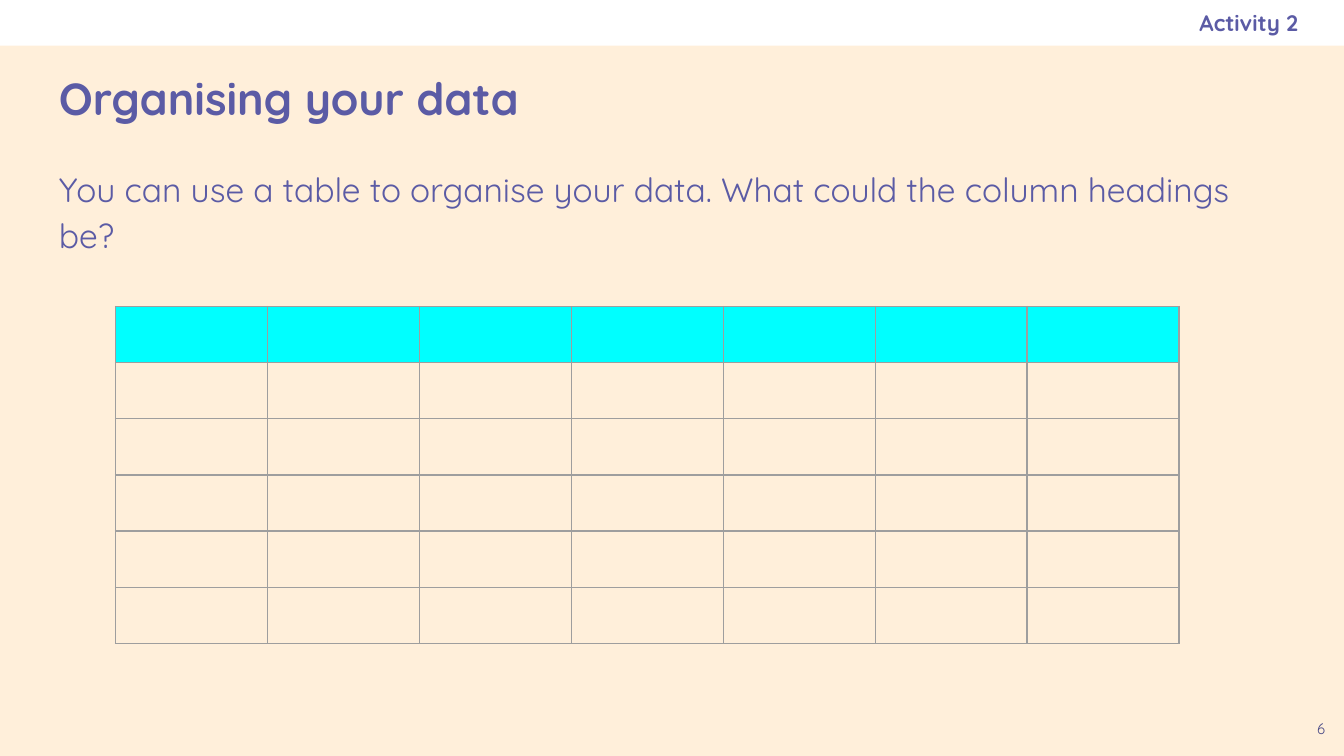
import pptx
import pptx.util
import pptx.dml.color
import pptx.enum.shapes
import pptx.enum.text
import pptx.oxml.ns
from lxml import etree

Pt = pptx.util.Pt
RGB = pptx.dml.color.RGBColor.from_string
ALIGN = pptx.enum.text.PP_ALIGN
ANCHOR = pptx.enum.text.MSO_ANCHOR
qn = pptx.oxml.ns.qn

THEME = {
    "font": "Quicksand",
    "background": "FFEFDA", "bar": "FFFFFF", "text": "5B5BA5",
    "number": "494985", "header": "00FFFF", "border": "9E9E9E",
    "title_size": 24, "body_size": 18, "label_size": 12, "number_size": 8,
}
WIDTH, HEIGHT = 720, 405
BAR_HEIGHT = 24.5
MARGIN = 24.55
INSET = 7.2
COLUMNS, ROWS = 7, 6
COLUMN_WIDTH, ROW_HEIGHT = 81.4, 30.1


def add_text(s, box, text, size, color="text", bold=False, anchor=ANCHOR.TOP,
             right_inset=INSET, **paragraph_format):
    tf = s.shapes.add_textbox(*map(Pt, box)).text_frame
    frame_format = {
        "word_wrap": True, "vertical_anchor": anchor,
        "margin_left": Pt(INSET), "margin_right": Pt(right_inset),
        "margin_top": Pt(INSET), "margin_bottom": Pt(INSET),
    }
    for name, value in frame_format.items():
        setattr(tf, name, value)
    p = tf.paragraphs[0]
    for name, value in paragraph_format.items():
        setattr(p, name, value)
    r = p.add_run()
    r.text = text
    for name, value in {"name": THEME["font"], "size": Pt(THEME[size]), "bold": bold}.items():
        setattr(r.font, name, value)
    r.font.color.rgb = RGB(THEME[color])


def add_borders(cell):
    tc_pr = cell._tc.get_or_add_tcPr()
    for side in ("lnL", "lnR", "lnT", "lnB"):
        ln = etree.SubElement(tc_pr, qn(f"a:{side}"), w=str(Pt(0.75)))
        fill = etree.SubElement(ln, qn("a:solidFill"))
        etree.SubElement(fill, qn("a:srgbClr"), val=THEME["border"])


prs = pptx.Presentation()
prs.slide_width, prs.slide_height = Pt(WIDTH), Pt(HEIGHT)
s = prs.slides.add_slide(prs.slide_layouts[6])
s.background.fill.solid()
s.background.fill.fore_color.rgb = RGB(THEME["background"])

bar = s.shapes.add_shape(pptx.enum.shapes.MSO_SHAPE.RECTANGLE, 0, 0, Pt(WIDTH), Pt(BAR_HEIGHT))
bar.shadow.inherit = False
bar.fill.solid()
bar.fill.fore_color.rgb = RGB(THEME["bar"])
bar.line.fill.background()

content_width = WIDTH - 2 * MARGIN
add_text(s, (MARGIN, 80, content_width, 300),
         "You can use a table to organise your data. What could the column headings be?",
         "body_size", line_spacing=1.15, space_after=Pt(16))
add_text(s, (MARGIN, BAR_HEIGHT, content_width, 55.5), "Organising your data",
         "title_size", bold=True, anchor=ANCHOR.MIDDLE)
add_text(s, (WIDTH - MARGIN, HEIGHT - BAR_HEIGHT, MARGIN, BAR_HEIGHT), "6",
         "number_size", color="number", alignment=ALIGN.CENTER)
add_text(s, (414, 0, WIDTH - MARGIN - 414, BAR_HEIGHT), "Activity 2",
         "label_size", bold=True, anchor=ANCHOR.MIDDLE, right_inset=0, alignment=ALIGN.RIGHT)

table = s.shapes.add_table(ROWS, COLUMNS, Pt(61.9), Pt(164.2),
                           Pt(COLUMNS * COLUMN_WIDTH), Pt(ROWS * ROW_HEIGHT)).table
table.first_row = table.horz_banding = False
for column in table.columns:
    column.width = Pt(COLUMN_WIDTH)
for i, row in enumerate(table.rows):
    row.height = Pt(ROW_HEIGHT)
    for cell in row.cells:
        add_borders(cell)
        if i == 0:
            cell.fill.solid()
            cell.fill.fore_color.rgb = RGB(THEME["header"])
        else:
            cell.fill.background()

prs.save("out.pptx")
